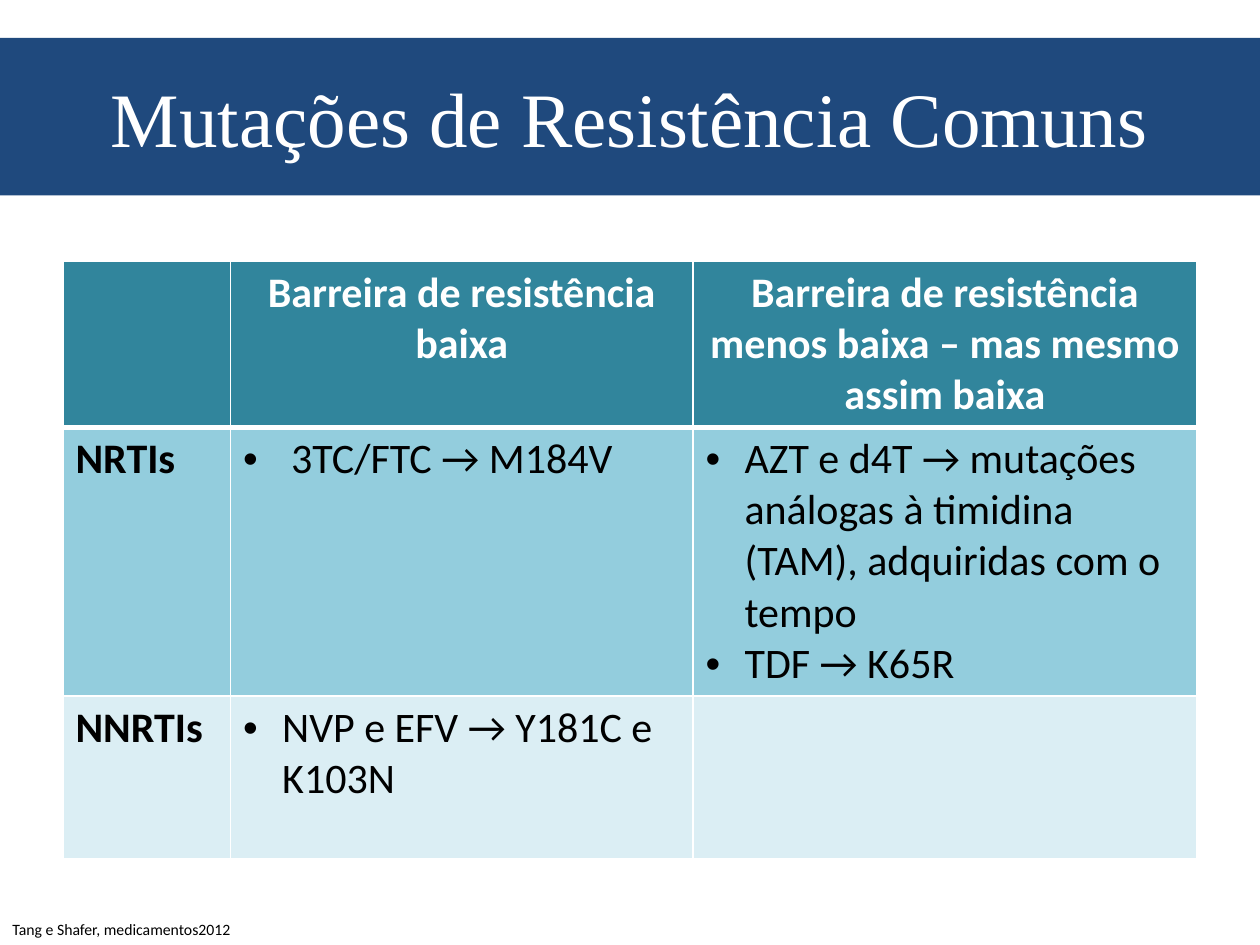
from dataclasses import dataclass
from lxml.etree import SubElement
from pptx import Presentation
from pptx.dml.color import RGBColor
from pptx.enum.shapes import MSO_SHAPE
from pptx.enum.text import MSO_ANCHOR, PP_ALIGN
from pptx.oxml.ns import qn
from pptx.util import Inches, Pt


@dataclass(frozen=True)
class Theme:
    navy: str = "1F497D"
    teal: str = "31859C"
    aqua: str = "93CDDD"
    pale: str = "DBEEF4"
    white: str = "FFFFFF"
    black: str = "000000"
    serif: str = "Times New Roman"
    sans: str = "Calibri"
    title: int = 44
    body: int = 24
    note: int = 9


THEME = Theme()
WIDTHS = (1.33, 3.67, 4)
HEIGHTS = (0.84, 1.97, 1.29)
FILLS = (THEME.teal, THEME.aqua, THEME.pale)
ROWS = (
    ([], ["Barreira de resistência baixa"],
     ["Barreira de resistência menos baixa – mas mesmo assim baixa"]),
    (["NRTIs"], ["3TC/FTC → M184V"],
     ["AZT e d4T → mutações análogas à timidina (TAM), adquiridas com o tempo",
      "TDF → K65R"]),
    (["NNRTIs"], ["NVP e EFV → Y181C e K103N"], []),
)


def style(para, face, size, color, bold=False):
    for run in para.runs:
        font = run.font
        font.name, font.size, font.bold = face, Pt(size), bold
        font.color.rgb = RGBColor.from_string(color)


def add_title(slide, left, top, width, height):
    band = slide.shapes.add_shape(MSO_SHAPE.RECTANGLE, left, top, width, height)
    band.shadow.inherit = False
    band.fill.solid()
    band.fill.fore_color.rgb = RGBColor.from_string(THEME.navy)
    band.line.fill.background()
    frame = band.text_frame
    frame.text = "Mutações de Resistência Comuns"
    frame.vertical_anchor = MSO_ANCHOR.MIDDLE
    para = frame.paragraphs[0]
    para.alignment = PP_ALIGN.CENTER
    style(para, THEME.serif, THEME.title, THEME.white)


def add_bullet(para, indent):
    props = para._p.get_or_add_pPr()
    props.set("marL", str(Inches(indent)))
    props.set("indent", str(-Inches(indent)))
    SubElement(props, qn("a:buFont"), typeface="Arial")
    SubElement(props, qn("a:buChar"), char="•")


def add_edges(cell, row):
    props = cell._tc.get_or_add_tcPr()
    sides = {"L": 1, "R": 1, "T": 3 if row == 1 else 1, "B": 3 if row == 0 else 1}
    for side, width in sides.items():
        line = SubElement(props, qn(f"a:ln{side}"), w=str(Pt(width)))
        SubElement(SubElement(line, qn("a:solidFill")), qn("a:srgbClr"), val=THEME.white)


def fill_cell(cell, lines, row, col):
    add_edges(cell, row)
    cell.fill.solid()
    cell.fill.fore_color.rgb = RGBColor.from_string(FILLS[row])
    cell.text_frame.text = "\n".join(lines)
    head = row == 0
    for para in cell.text_frame.paragraphs:
        if head:
            para.alignment = PP_ALIGN.CENTER
        elif col and lines:
            add_bullet(para, 0.38 if (row, col) == (1, 1) else 0.31)
        style(para, THEME.sans, THEME.body,
              THEME.white if head else THEME.black, head or col == 0)


def add_grid(slide, left, top, width, height):
    table = slide.shapes.add_table(
        len(ROWS), len(WIDTHS), left, top, width, height).table
    for column, size in zip(table.columns, WIDTHS):
        column.width = Inches(size)
    for row, size in zip(table.rows, HEIGHTS):
        row.height = Inches(size)
    for row, cells in enumerate(ROWS):
        for col, lines in enumerate(cells):
            fill_cell(table.cell(row, col), lines, row, col)


def add_source(slide, left, top, width, height):
    frame = slide.shapes.add_textbox(left, top, width, height).text_frame
    frame.word_wrap = True
    frame.text = "Tang e Shafer, medicamentos2012"
    style(frame.paragraphs[0], THEME.sans, THEME.note, THEME.black)


def main():
    deck = Presentation()
    deck.slide_width, deck.slide_height = Inches(10), Inches(7.5)
    slide = deck.slides.add_slide(deck.slide_layouts[6])
    add_title(slide, Inches(0), Inches(0.3), Inches(10), Inches(1.25))
    add_grid(slide, Inches(0.5), Inches(2.07), Inches(9), Inches(4.69))
    add_source(slide, Inches(0), Inches(7.25), Inches(6.92), Inches(0.25))
    deck.save("out.pptx")


if __name__ == "__main__":
    main()
